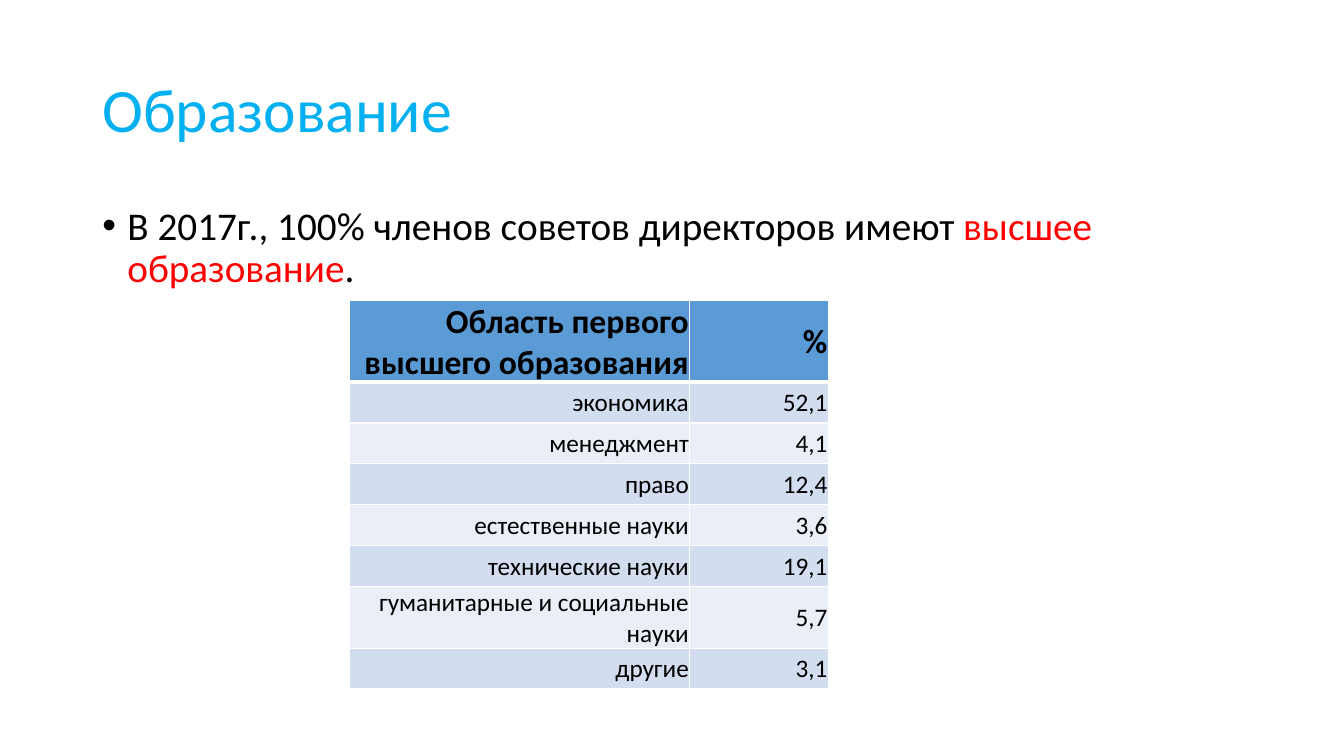
from lxml import etree
from pptx import Presentation
from pptx.dml.color import RGBColor
from pptx.enum.text import MSO_ANCHOR, PP_ALIGN
from pptx.oxml.ns import qn
from pptx.util import Emu, Pt

MIDDLE = MSO_ANCHOR.MIDDLE
TOP = MSO_ANCHOR.TOP
RIGHT = PP_ALIGN.RIGHT

FONT = "Calibri"
BLACK, WHITE, RED, SKY = "000000", "FFFFFF", "FF0000", "00B0F0"
HEADER_FILL = "5B9BD5"
BAND_FILLS = ("D2DEEF", "EAEFF7")

COLUMN_WIDTHS = (324, 132)
HEADER_HEIGHT, ROW_HEIGHT = 60, 39
EDUCATION_ROWS = (
    ("Область первого высшего образования", "%"),
    ("экономика", "52,1"),
    ("менеджмент", "4,1"),
    ("право", "12,4"),
    ("естественные науки", "3,6"),
    ("технические науки", "19,1"),
    ("гуманитарные и социальные науки", "5,7"),
    ("другие", "3,1"),
)


def px(length):
    """Turn px (96 to the inch) into EMU."""
    return Emu(length * 9525)


def color(hex_string):
    return RGBColor.from_string(hex_string)


def add_run(paragraph, text, size, hex_string, bold=False):
    run = paragraph.add_run()
    run.text = text
    run.font.name = FONT
    run.font.size = Pt(size)
    run.font.bold = bold
    run.font.color.rgb = color(hex_string)


def add_text_box(slide, box, anchor):
    """Add a wrapping text box and return its first paragraph."""
    frame = slide.shapes.add_textbox(*map(px, box)).text_frame
    frame.word_wrap = True
    frame.vertical_anchor = anchor
    paragraph = frame.paragraphs[0]
    paragraph.line_spacing = 0.9
    return paragraph


def add_title(slide, box):
    add_run(add_text_box(slide, box, MIDDLE), "Образование", 44, SKY)


def add_bullet_text(slide, box):
    paragraph = add_text_box(slide, box, TOP)
    paragraph.space_before = Pt(10)
    properties = paragraph._p.get_or_add_pPr()
    properties.set("marL", str(px(24)))
    properties.set("indent", str(px(-24)))
    etree.SubElement(properties, qn("a:buFont"), typeface="Arial")
    etree.SubElement(properties, qn("a:buChar"), char="•")
    for text, hex_string in (
        ("В 2017г., 100% членов советов директоров имеют ", BLACK),
        ("высшее образование", RED),
        (".", BLACK),
    ):
        add_run(paragraph, text, 28, hex_string)


def set_borders(cell, top, bottom):
    """Draw white borders, one point wide at the sides."""
    properties = cell._tc.get_or_add_tcPr()
    for side, width in (("L", 1), ("R", 1), ("T", top), ("B", bottom)):
        line = etree.SubElement(properties, qn(f"a:ln{side}"), w=str(Pt(width)))
        fill = etree.SubElement(line, qn("a:solidFill"))
        etree.SubElement(fill, qn("a:srgbClr"), val=WHITE)


def fill_cell(cell, text, row):
    is_header = row == 0
    set_borders(cell, top=3 if row == 1 else 1, bottom=3 if is_header else 1)
    cell.fill.solid()
    cell.fill.fore_color.rgb = color(HEADER_FILL if is_header else BAND_FILLS[(row - 1) % 2])
    cell.vertical_anchor = MIDDLE
    cell.margin_left = cell.margin_right = cell.margin_top = px(1)
    cell.margin_bottom = 0
    paragraph = cell.text_frame.paragraphs[0]
    paragraph.alignment = RIGHT
    add_run(paragraph, text, 24 if is_header else 18, BLACK, is_header)


def add_education_table(slide, left, top):
    heights = [HEADER_HEIGHT] + [ROW_HEIGHT] * (len(EDUCATION_ROWS) - 1)
    table = slide.shapes.add_table(
        len(heights), len(COLUMN_WIDTHS),
        px(left), px(top), px(sum(COLUMN_WIDTHS)), px(sum(heights)),
    ).table
    for column, width in zip(table.columns, COLUMN_WIDTHS):
        column.width = px(width)
    for row, (height, texts) in enumerate(zip(heights, EDUCATION_ROWS)):
        table.rows[row].height = px(height)
        for column, text in enumerate(texts):
            fill_cell(table.cell(row, column), text, row)


def main():
    presentation = Presentation()
    presentation.slide_width = px(1280)
    presentation.slide_height = px(720)
    slide = presentation.slides.add_slide(presentation.slide_layouts[6])
    add_title(slide, (88, 38, 1104, 139))
    add_bullet_text(slide, (88, 192, 1104, 457))
    add_education_table(slide, 333, 286)
    presentation.save("out.pptx")


if __name__ == "__main__":
    main()
